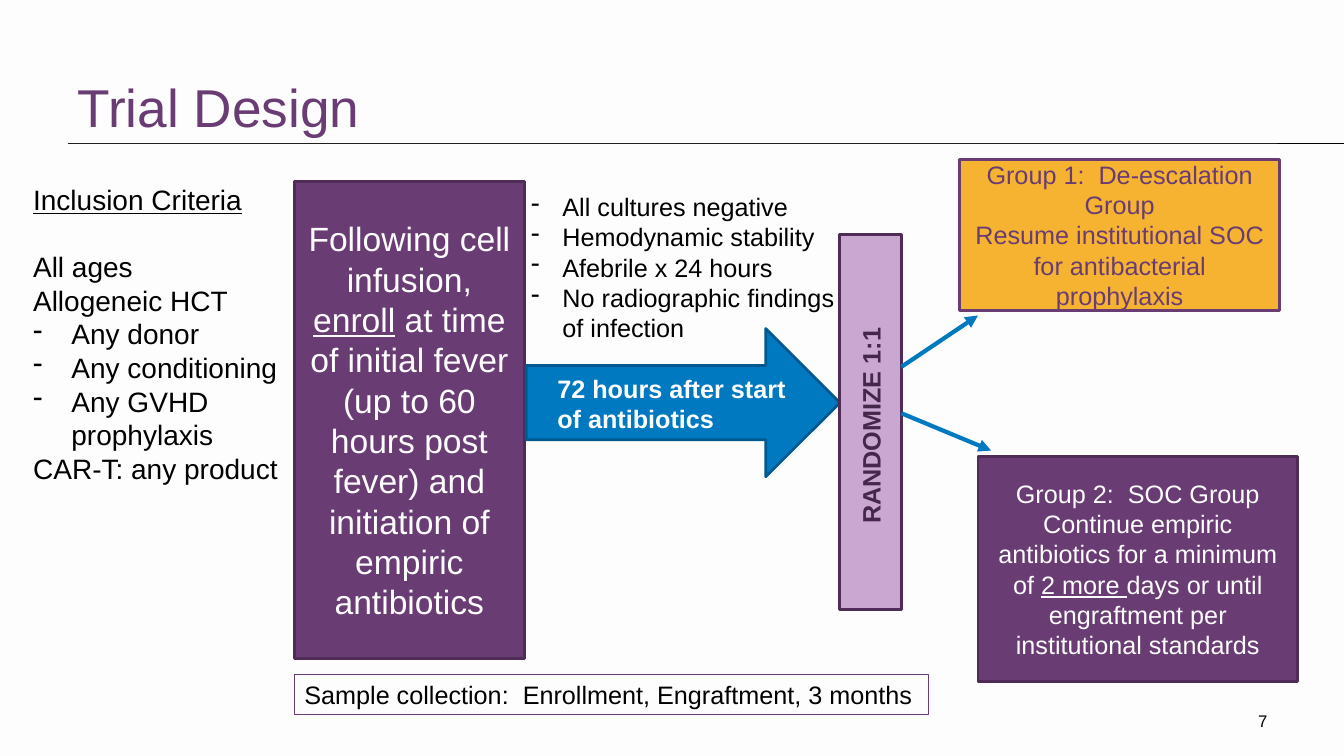
from pptx import Presentation
from pptx.dml.color import RGBColor
from pptx.enum.shapes import MSO_CONNECTOR, MSO_SHAPE
from pptx.enum.text import MSO_ANCHOR, PP_ALIGN
from pptx.oxml.ns import qn
from pptx.util import Inches, Pt
from lxml.etree import SubElement

PURPLE = RGBColor(0x69, 0x3C, 0x74)
DARK_PURPLE = RGBColor(0x4E, 0x2C, 0x56)
DEEP_PURPLE = RGBColor(0x45, 0x27, 0x4C)
LILAC = RGBColor(0xC9, 0xA7, 0xD1)
ORANGE = RGBColor(0xF6, 0xB3, 0x31)
BLUE = RGBColor(0x00, 0x79, 0xC1)
DARK_BLUE = RGBColor(0x00, 0x5A, 0x8F)
BLACK = RGBColor(0, 0, 0)
OFF_WHITE = RGBColor(0xFD, 0xFD, 0xFD)


def write_text(shape, paragraphs, size=18, color=BLACK, bold=False, align=PP_ALIGN.LEFT,
               anchor=MSO_ANCHOR.TOP, wrap=True, indent=0.31):
    """Each paragraph is a list of runs; "_" marks an underlined run, "-" a bulleted paragraph."""
    frame = shape.text_frame
    frame.word_wrap = wrap
    frame.vertical_anchor = anchor
    for index, runs in enumerate(paragraphs):
        paragraph = frame.add_paragraph() if index else frame.paragraphs[0]
        paragraph.alignment = align
        if runs[0] == "-":
            runs = runs[1:]
            properties = paragraph._p.get_or_add_pPr()
            properties.set("marL", str(Inches(indent)))
            properties.set("indent", str(-Inches(indent)))
            SubElement(properties, qn("a:buFontTx"))
            SubElement(properties, qn("a:buChar")).set("char", "-")
        for text in runs:
            run = paragraph.add_run()
            run.text = text.lstrip("_")
            run.font.name = "Arial"
            run.font.size = Pt(size)
            run.font.bold = bold
            run.font.color.rgb = color
            if text.startswith("_"):
                run.font.underline = True


def add_box(slide, box, fill=None, line=None, width=2, kind=MSO_SHAPE.RECTANGLE):
    shape = slide.shapes.add_shape(kind, *map(Inches, box))
    shape.shadow.inherit = False
    if fill is None:
        shape.fill.background()
    else:
        shape.fill.solid()
        shape.fill.fore_color.rgb = fill
    if line is None:
        shape.line.fill.background()
    else:
        shape.line.color.rgb = line
        shape.line.width = Pt(width)
    return shape


def add_text_box(slide, box, paragraphs, **text_format):
    text_box = slide.shapes.add_textbox(*map(Inches, box))
    write_text(text_box, paragraphs, **text_format)
    return text_box


def add_line(slide, start, end, color, width, arrow=False):
    connector = slide.shapes.add_connector(
        MSO_CONNECTOR.STRAIGHT, *map(Inches, (*start, *end)))
    connector.line.color.rgb = color
    connector.line.width = Pt(width)
    if arrow:
        SubElement(connector.line._get_or_add_ln(), qn("a:tailEnd")).set("type", "triangle")
    SubElement(connector._element.spPr, qn("a:effectLst"))


def add_heading(slide, box):
    left, top, width, height = box
    rule = top + height
    add_line(slide, (left, rule), (13.33, rule), BLACK, 0.75)
    title = add_box(slide, box, OFF_WHITE)
    write_text(title, [["Trial Design"]], size=38, color=PURPLE, anchor=MSO_ANCHOR.BOTTOM)


def add_criteria(slide, box):
    criteria = add_text_box(slide, box, [
        ["_Inclusion Criteria"], ["All ages"], ["Allogeneic HCT"],
        ["-", "Any donor"], ["-", "Any conditioning"], ["-", "Any GVHD prophylaxis"],
        ["CAR-T: any product"]], size=20, indent=0.38)
    criteria.text_frame.paragraphs[1].space_before = Pt(24)


def add_enrollment(slide, box):
    left, top, width, height = box
    enrollment = add_box(slide, box, PURPLE, DARK_PURPLE)
    write_text(enrollment, [[
        "Following cell infusion, ", "_enroll",
        " at time of initial fever (up to 60 hours post fever) and initiation of "
        "empiric antibiotics"]],
        size=24, color=OFF_WHITE, align=PP_ALIGN.CENTER, anchor=MSO_ANCHOR.MIDDLE)
    # Sampling schedule under the enrollment box
    samples = add_box(slide, (left, top + height + 0.16, 6.29, 0.4), line=PURPLE, width=0.75)
    write_text(samples, [["Sample collection:  Enrollment, Engraftment, 3 months"]], wrap=False)


def add_waiting_period(slide, box):
    left, top, width, height = box
    add_box(slide, box, BLUE, DARK_BLUE, kind=MSO_SHAPE.RIGHT_ARROW)
    # Conditions above the arrow, then its label
    add_text_box(slide, (left - 0.05, top - 1.41, width + 0.1, 1.62), [
        ["-", "All cultures negative"], ["-", "Hemodynamic stability"],
        ["-", "Afebrile x 24 hours"], ["-", "No radiographic findings of infection"]])
    add_text_box(slide, (left + 0.21, top + 0.39, 2.47, 0.71),
                 [["72 hours after start of antibiotics"]], color=OFF_WHITE, bold=True)


def add_randomization(slide, box):
    left, top, width, height = box
    bar = add_box(slide, box, LILAC, DARK_PURPLE)
    write_text(bar, [["RANDOMIZE 1:1 "]], color=DEEP_PURPLE, bold=True,
               align=PP_ALIGN.CENTER, anchor=MSO_ANCHOR.MIDDLE)
    bar.text_frame._txBody.bodyPr.set("vert", "vert270")
    # Arrows to the two groups
    right = left + width
    add_line(slide, (right, top + 1.31), (right + 0.76, top + 0.8), BLUE, 3, arrow=True)
    add_line(slide, (right, top + 1.77), (right + 0.89, top + 2.14), BLUE, 3, arrow=True)


def add_group(slide, box, paragraphs, fill, line, color):
    group = add_box(slide, box, fill, line)
    write_text(group, paragraphs, color=color, align=PP_ALIGN.CENTER, anchor=MSO_ANCHOR.MIDDLE)


def main():
    presentation = Presentation()
    presentation.slide_width = Inches(13.33)
    presentation.slide_height = Inches(7.5)
    slide = presentation.slides.add_slide(presentation.slide_layouts[6])
    slide.background.fill.solid()
    slide.background.fill.fore_color.rgb = OFF_WHITE

    add_heading(slide, (0.67, 0.17, 12, 1.25))
    add_criteria(slide, (0.23, 1.76, 2.67, 3.13))
    add_enrollment(slide, (2.92, 1.8, 2.28, 4.73))
    add_waiting_period(slide, (5.22, 3.26, 3.11, 1.47))
    add_randomization(slide, (8.33, 2.33, 0.61, 3.72))
    add_group(slide, (9.52, 1.58, 3.17, 1.5), [
        ["Group 1:  De-escalation Group"],
        ["Resume institutional SOC for antibacterial prophylaxis"]], ORANGE, PURPLE, PURPLE)
    add_group(slide, (9.7, 4.53, 3.17, 2.23), [
        ["Group 2:  SOC Group"],
        ["Continue empiric antibiotics for a minimum of ", "_2 more ",
         "days or until engraftment per institutional standards"]],
        PURPLE, DARK_PURPLE, OFF_WHITE)
    # Page number
    add_text_box(slide, (12, 6.95, 0.67, 0.4), [["7"]], size=12,
                 align=PP_ALIGN.RIGHT, anchor=MSO_ANCHOR.MIDDLE)
    presentation.save("out.pptx")


if __name__ == "__main__":
    main()
